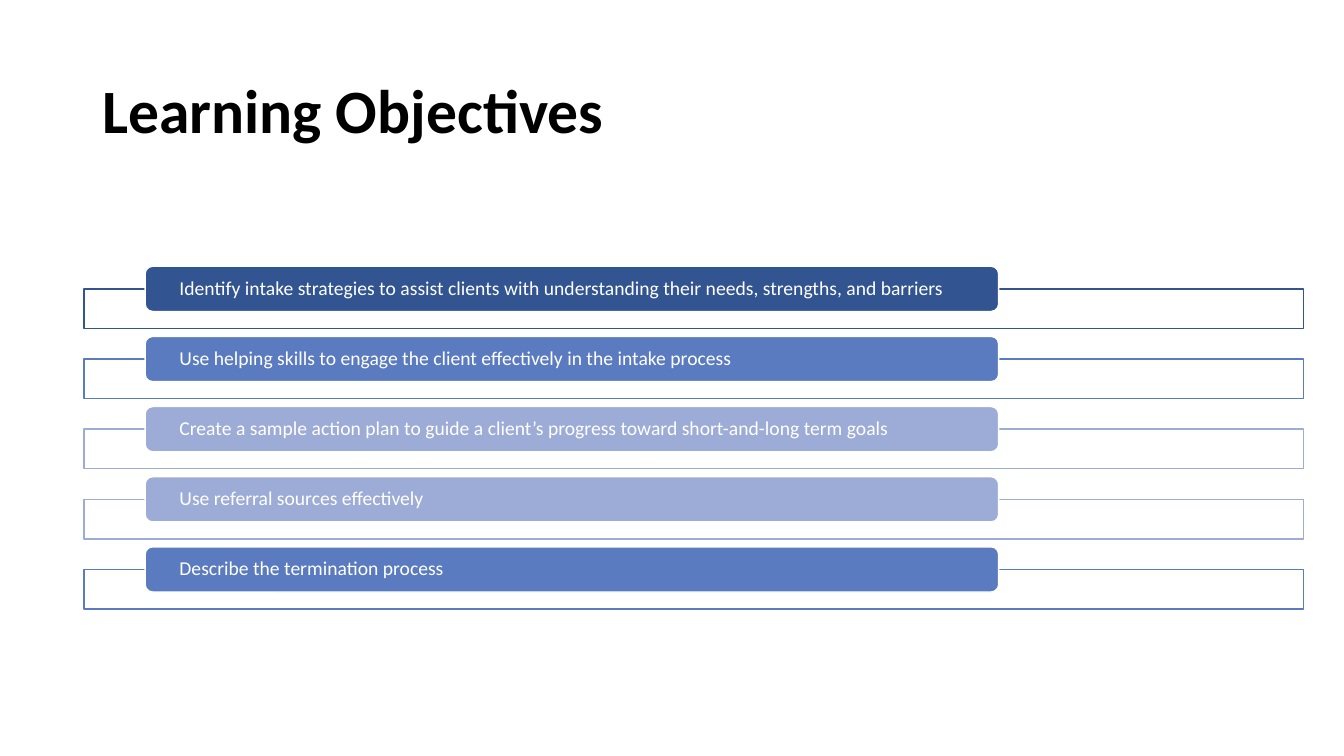
from lxml import etree
from pptx import Presentation
from pptx.dml.color import RGBColor
from pptx.enum.shapes import MSO_SHAPE
from pptx.enum.text import MSO_ANCHOR, PP_ALIGN
from pptx.oxml.ns import qn
from pptx.util import Cm, Pt

RECT = MSO_SHAPE.RECTANGLE
ROUNDED = MSO_SHAPE.ROUNDED_RECTANGLE
MIDDLE = MSO_ANCHOR.MIDDLE
LEFT = PP_ALIGN.LEFT
TITLE_ONLY = 5
FONT = "Calibri"

COLORS = {
    "black": "000000",
    "white": "FFFFFF",
    "dark": "325491",
    "mid": "5B7BC0",
    "light": "9DACD6",
}

OBJECTIVES = [
    ("Identify intake strategies to assist clients with understanding their needs, strengths, and barriers", "dark"),
    ("Use helping skills to engage the client effectively in the intake process", "mid"),
    ("Create a sample action plan to guide a client’s progress toward short-and-long term goals", "light"),
    ("Use referral sources effectively", "light"),
    ("Describe the termination process", "mid"),
]


def rgb(name):
    return RGBColor.from_string(COLORS[name])


def set_text(sp, text, size, color, bold=False):
    tf = sp.text_frame
    tf.word_wrap = True
    tf.vertical_anchor = MIDDLE
    p = tf.paragraphs[0]
    p.text = text
    p.alignment = LEFT
    p.line_spacing = 0.9
    p.font.name = FONT
    p.font.size = Pt(size)
    p.font.bold = bold
    p.font.color.rgb = rgb(color)
    return tf


def add_box(shapes, kind, x, y, w, h, fill, line):
    sp = shapes.add_shape(kind, x, y, w, h)
    sp.shadow.inherit = False
    sp.fill.solid()
    sp.fill.fore_color.rgb = rgb(fill)
    sp.line.color.rgb = rgb(line)
    sp.line.width = Pt(1)
    return sp


def set_opacity(sp, percent):
    color = sp.fill._xPr.find(qn("a:solidFill"))[0]
    etree.SubElement(color, qn("a:alpha")).set("val", str(percent * 1000))


def add_title(s, x, y, w, h):
    sp = s.shapes.title
    sp.left, sp.top, sp.width, sp.height = x, y, w, h
    set_text(sp, "Learning Objectives", 44, "black", bold=True)


def add_objectives(s, x, y, w, h):
    bar_h, frame_h, frame_drop = Cm(1.14), Cm(1), Cm(0.57)
    pitch = (h - frame_drop - frame_h) // (len(OBJECTIVES) - 1)
    group = s.shapes.add_group_shape()
    for i, (text, color) in enumerate(OBJECTIVES):
        top = y + i * pitch
        frame = add_box(group.shapes, RECT, x, top + frame_drop, w, frame_h, "white", color)
        set_opacity(frame, 90)
        bar = add_box(group.shapes, ROUNDED, x + w // 20, top, w * 7 // 10, bar_h, color, "white")
        tf = set_text(bar, text, 14, "white")
        tf.margin_left = tf.margin_right = Cm(0.81)
        tf.margin_top = tf.margin_bottom = 0


def main():
    prs = Presentation()
    prs.slide_width, prs.slide_height = Cm(33.87), Cm(19.05)
    s = prs.slides.add_slide(prs.slide_layouts[TITLE_ONLY])
    s.background.fill.solid()
    s.background.fill.fore_color.rgb = rgb("white")
    add_title(s, Cm(2.33), Cm(1.02), Cm(29.21), Cm(3.68))
    add_objectives(s, Cm(2.12), Cm(6.71), Cm(30.73), Cm(8.64))
    prs.save("out.pptx")


if __name__ == "__main__":
    main()
